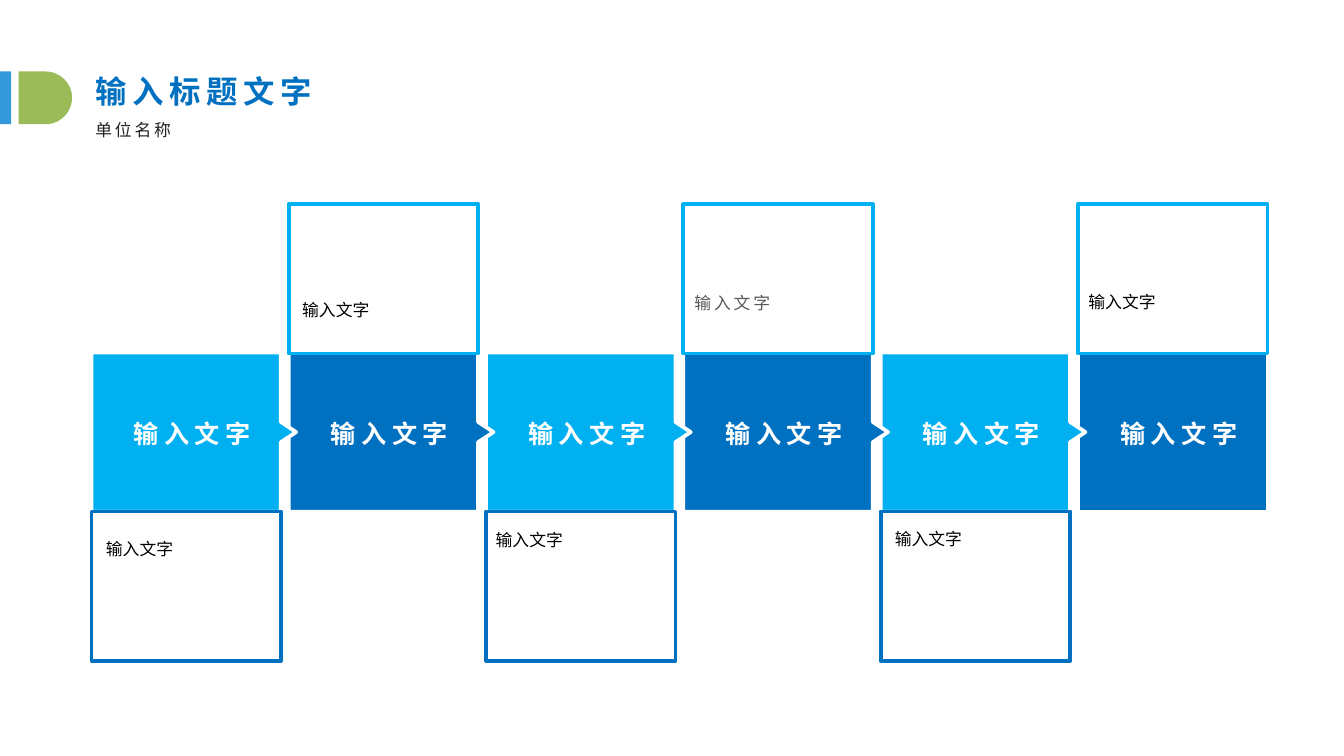
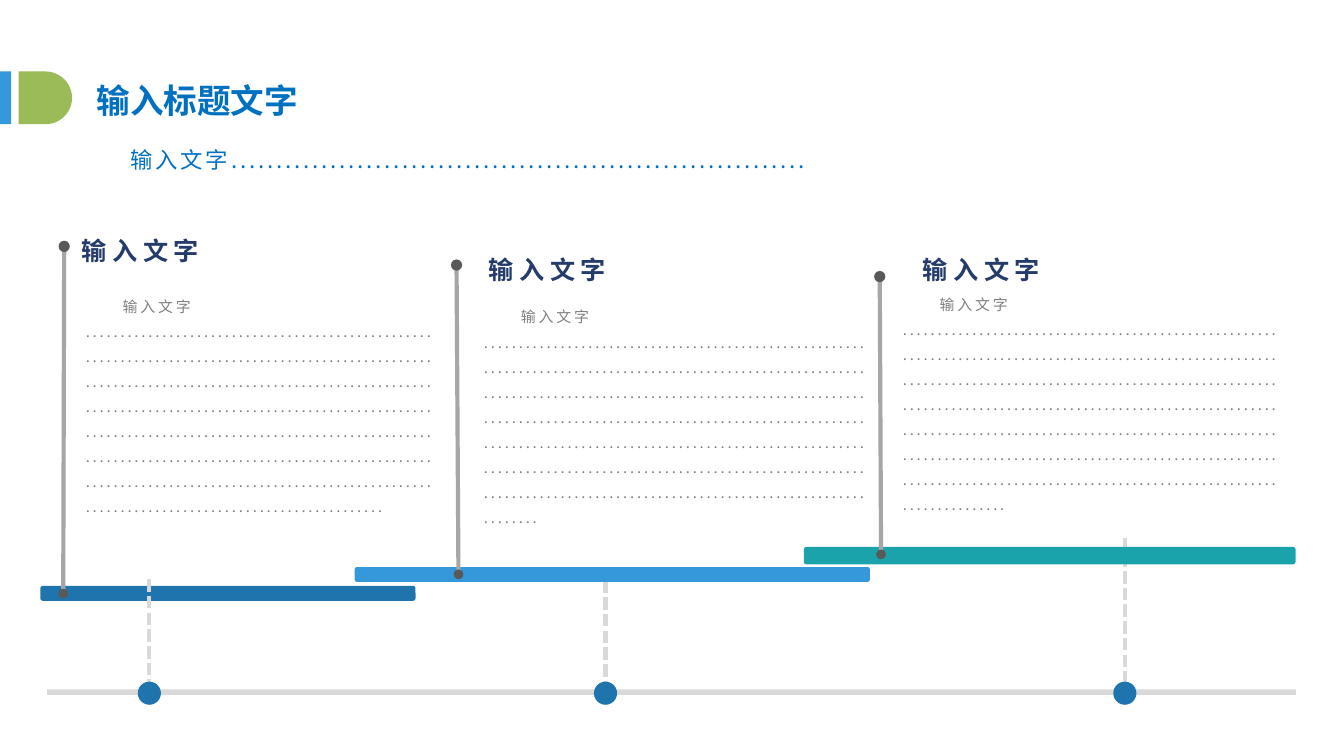
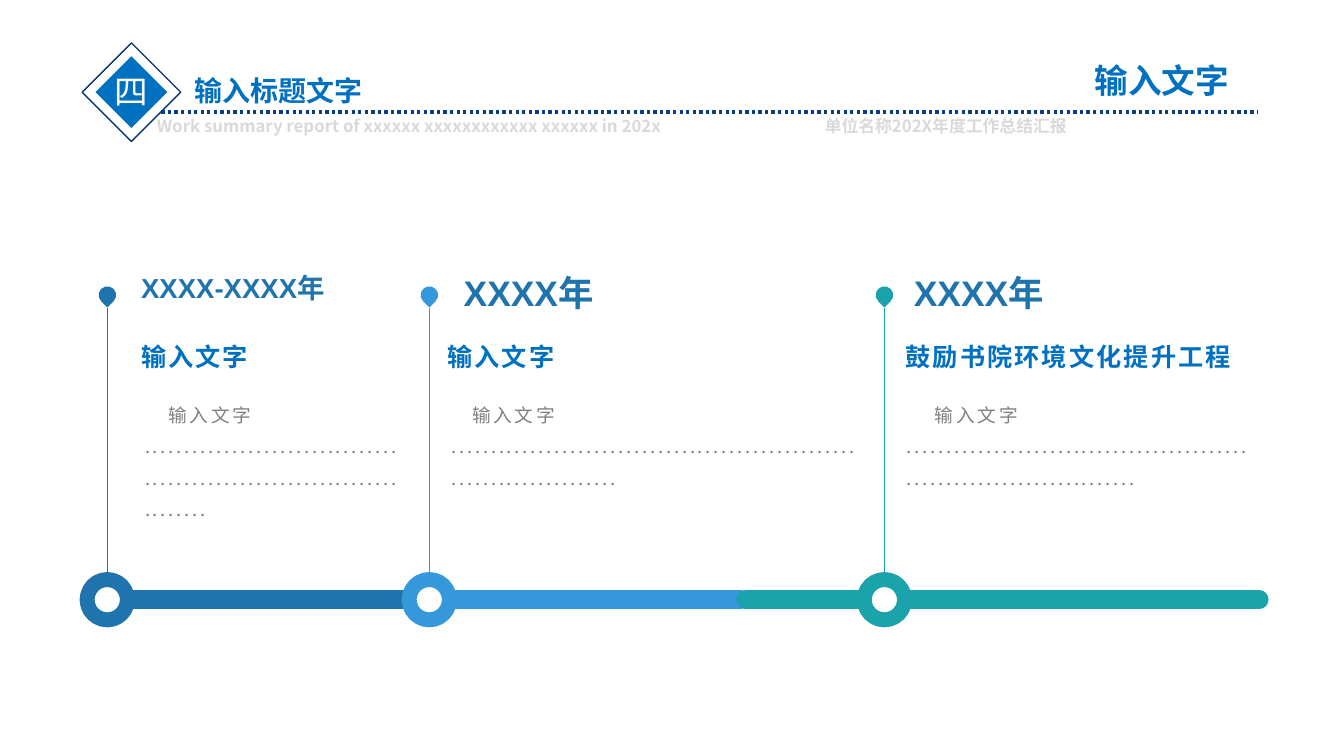
from lxml import etree
from pptx import Presentation
from pptx.dml.color import RGBColor
from pptx.enum.dml import MSO_LINE
from pptx.enum.shapes import MSO_CONNECTOR, MSO_SHAPE
from pptx.enum.text import MSO_ANCHOR, PP_ALIGN
from pptx.oxml.ns import qn
from pptx.util import Pt

RECTANGLE = MSO_SHAPE.RECTANGLE
ROUNDED = MSO_SHAPE.ROUNDED_RECTANGLE
OVAL = MSO_SHAPE.OVAL
DIAMOND = MSO_SHAPE.DIAMOND
TEARDROP = MSO_SHAPE.TEAR
DELAY = MSO_SHAPE.FLOWCHART_DELAY
STRAIGHT = MSO_CONNECTOR.STRAIGHT
DASH = MSO_LINE.SQUARE_DOT
DOT = MSO_LINE.ROUND_DOT
TOP = MSO_ANCHOR.TOP
MIDDLE = MSO_ANCHOR.MIDDLE
BOTTOM = MSO_ANCHOR.BOTTOM
LEFT = PP_ALIGN.LEFT
CENTER = PP_ALIGN.CENTER

WHITE = RGBColor(0xFF, 0xFF, 0xFF)
BLACK = RGBColor(0x00, 0x00, 0x00)
INK = RGBColor(0x22, 0x22, 0x22)
DARK_GRAY = RGBColor(0x59, 0x59, 0x59)
GRAY = RGBColor(0x80, 0x80, 0x80)
POLE_GRAY = RGBColor(0xA6, 0xA6, 0xA6)
LIGHT_GRAY = RGBColor(0xD9, 0xD9, 0xD9)
BLUE = RGBColor(0x00, 0x70, 0xC0)
SKY = RGBColor(0x00, 0xB0, 0xF0)
STEEL = RGBColor(0x1F, 0x74, 0xAD)
AZURE = RGBColor(0x34, 0x98, 0xDB)
TEAL = RGBColor(0x1A, 0xA3, 0xAA)
GREEN = RGBColor(0x9B, 0xBB, 0x59)
NAVY = RGBColor(0x25, 0x3B, 0x6B)
FRAME_NAVY = RGBColor(0x06, 0x36, 0x72)
RULE_NAVY = RGBColor(0x07, 0x3E, 0x87)

FONT = "Noto Sans CJK SC"
YEAR_FONT = "Arial"
NORMAL = (7.2, 3.6, 7.2, 3.6)
HEAD = (7.2, 3.6, 7.2, 0)
SUBHEAD = (7.2, 0, 7.2, 3.6)
TIGHT = (5, 2.7, 5, 2.7)
PLACEHOLDER = "输入文字"
TITLE = "输入标题文字"


def add_text(slide, box, lines, size, color, bold=False, tracking=0, leading=None, anchor=TOP,
             align=LEFT, insets=NORMAL, indent=0, tab=None, font=FONT):
    frame = slide.shapes.add_textbox(*map(Pt, box)).text_frame
    frame.word_wrap = True
    frame.vertical_anchor = anchor
    frame.margin_left, frame.margin_top, frame.margin_right, frame.margin_bottom = map(Pt, insets)
    for index, line in enumerate(lines):
        paragraph = frame.paragraphs[0] if index == 0 else frame.add_paragraph()
        properties = paragraph._p.get_or_add_pPr()
        if tab:
            stops = etree.SubElement(properties, qn("a:tabLst"))
            etree.SubElement(stops, qn("a:tab"), pos=str(Pt(tab)), algn="l")
        if indent and index == 0:
            properties.set("marL", "0")
            properties.set("indent", str(Pt(indent)))
        paragraph.alignment = align
        paragraph.line_spacing = leading
        run = paragraph.add_run()
        run.text = line
        run.font.size = Pt(size)
        run.font.bold = bold
        run.font.color.rgb = color
        run.font.name = font
        character = run._r.get_or_add_rPr()
        character.set("spc", str(round(tracking * 100)))
        etree.SubElement(character, qn("a:ea"), typeface=FONT)


def style(shape, line=None, weight=1, fill=None, dash=None):
    if line is None:
        shape.line.fill.background()
    else:
        shape.line.color.rgb = line
        shape.line.width = Pt(weight)
        if dash:
            shape.line.dash_style = dash
    etree.SubElement(shape._element.spPr, qn("a:effectLst"))
    if fill is not None:
        shape.fill.solid()
        shape.fill.fore_color.rgb = fill
    return shape


presentation = Presentation()
presentation.slide_width = Pt(720)
presentation.slide_height = Pt(405)
blank = presentation.slide_layouts[6]
process, stages, timeline = [presentation.slides.add_slide(blank) for _ in range(3)]

for slide in (process, stages):
    for kind, left, width, color in ((RECTANGLE, 0, 6, AZURE), (DELAY, 10, 28.6, GREEN)):
        mark = slide.shapes.add_shape(kind, Pt(left), Pt(38.3), Pt(width), Pt(28.3))
        style(mark, fill=color)

add_text(process, (44, 31, 137, 31), [TITLE], 16.8, BLUE, True, 3, 1.2, insets=HEAD)
add_text(process, (44, 62, 114, 18), ["单位名称"], 9, INK, tracking=1.5, leading=1.2, insets=SUBHEAD)

TILE_LEFT, TILE_TOP, TILE_WIDTH, TILE_HEIGHT, TILE_STEP = 49, 188.8, 101.5, 85.4, 105.7
TILE_COUNT = 6
tile_lefts = [TILE_LEFT + TILE_STEP * index for index in range(TILE_COUNT)]
for index in reversed(range(TILE_COUNT)):
    left = tile_lefts[index]
    right, bottom = left + TILE_WIDTH, TILE_TOP + TILE_HEIGHT
    center = TILE_TOP + TILE_HEIGHT / 2
    color = BLUE if index % 2 else SKY
    if index == TILE_COUNT - 1:
        tile = process.shapes.add_shape(RECTANGLE, Pt(left), Pt(TILE_TOP), Pt(TILE_WIDTH), Pt(TILE_HEIGHT))
    else:
        outline = [(right, TILE_TOP), (right, center - 5.4), (right + 8.2, center),
                   (right, center + 5.4), (right, bottom), (left, bottom)]
        builder = process.shapes.build_freeform(Pt(left), Pt(TILE_TOP), scale=1.0)
        builder.add_line_segments([(Pt(x), Pt(y)) for x, y in outline], close=True)
        tile = builder.convert_to_shape()
    style(tile, WHITE, 2, color)

notes = [
    (49.7, 279.4, 1.5, BLACK, 0),
    (154.8, 92.9, 1.5, BLACK, 0),
    (258.5, 275, 1.5, BLACK, 0),
    (365, 89.3, 1.4, DARK_GRAY, 1.5),
    (472.3, 274.3, 1.5, BLACK, 0),
    (576, 88.6, 1.4, BLACK, 0),
]
for index, (left, (note_left, note_top, leading, color, tracking)) in enumerate(zip(tile_lefts, notes)):
    above = index % 2 == 1
    add_text(process, (left + 5, 216.7, 98, 27.4), [PLACEHOLDER], 13.5, WHITE, True, 3, 1.2, MIDDLE, CENTER)
    add_text(process, (note_left, note_top, 108, 82), [PLACEHOLDER], 9, color, False, tracking, leading,
             BOTTOM if above else TOP)
    frame_top = 109.4 if above else 274
    frame = process.shapes.add_shape(RECTANGLE, Pt(left), Pt(frame_top), Pt(TILE_WIDTH), Pt(80))
    style(frame, SKY if above else BLUE, 2).fill.background()

add_text(stages, (44.6, 39, 148, 29), [TITLE], 18, BLUE, True)
add_text(stages, (44.6, 75.6, 621, 47), [PLACEHOLDER + "." * 64], 12, BLUE, tracking=1.5, leading=1.2,
         insets=SUBHEAD, indent=18.2)

baseline = stages.shapes.add_shape(RECTANGLE, Pt(25.2), Pt(369.4), Pt(669), Pt(2.9))
style(baseline, fill=LIGHT_GRAY)
dashes = [(602.6, 288), (324.4, 311), (80, 310.3)]
bars = [(21.6, 313.9, 201, 8, STEEL), (430.6, 293, 263.5, 9.4, TEAL), (190, 303.8, 276, 8, AZURE)]
for (x, dash_top), (left, top, width, height, color) in zip(dashes, bars):
    dash = stages.shapes.add_connector(STRAIGHT, Pt(x), Pt(dash_top), Pt(x), Pt(366))
    style(dash, LIGHT_GRAY, 2.25, dash=DASH)
    bar = stages.shapes.add_shape(ROUNDED, Pt(left), Pt(top), Pt(width), Pt(height))
    style(bar, fill=color)
    marker = stages.shapes.add_shape(OVAL, Pt(x - 6.2), Pt(365.2), Pt(12.4), Pt(12.4))
    style(marker, fill=STEEL)

columns = [
    ((36.7, 118), (38.9, 152), 202, (34.4, 132), (33.9, 318)),
    ((254.9, 128.2), (252.2, 157.7), 221.8, (244.6, 142), (245.6, 307.7)),
    ((487.4, 128.2), (476.6, 151), 216.7, (471.3, 148.2), (472, 297)),
]
for heading, body, width, pole_top, pole_bottom in columns:
    add_text(stages, (*heading, 150, 24), [PLACEHOLDER], 13.5, NAVY, True, 3, 1.2, BOTTOM, insets=HEAD)
    add_text(stages, (*body, width, 128), [PLACEHOLDER, "." * 393], 8, GRAY, tracking=1.5, leading=1.4, indent=19.7)
    pole = stages.shapes.add_connector(STRAIGHT, *map(Pt, pole_bottom + pole_top))
    style(pole, POLE_GRAY, 2.25)
    for (x, y), size in ((pole_top, 6), (pole_bottom, 5.2)):
        knob = stages.shapes.add_shape(OVAL, Pt(x - size / 2), Pt(y - size / 2), Pt(size), Pt(size))
        style(knob, fill=DARK_GRAY)

events = [
    (57.5, 54, 224, STEEL, "XXXX-XXXX年", 14.7, 70.6, PLACEHOLDER, 70.6, 70.6, 151, 12.6),
    (230, 226.8, 396.7, AZURE, "XXXX年", 19, 243.4, PLACEHOLDER, 234.7, 234.7, 234.7, 11.2),
    (473.8, 399.6, 674.6, TEAL, "XXXX年", 19, 484.6, "鼓励书院环境文化提升工程", 480.2, 478.8, 198.7, 15),
]
for (x, start, end, color, year, year_size, year_left, heading, heading_left,
     body_left, body_width, indent) in events:
    segment = timeline.shapes.add_connector(STRAIGHT, Pt(start), Pt(321.3), Pt(end), Pt(321.3))
    style(segment, color, 10)
    segment._element.spPr.find(qn("a:ln")).set("cap", "rnd")
    ring = timeline.shapes.add_shape(OVAL, Pt(x - 10.8), Pt(310.5), Pt(21.6), Pt(21.6))
    style(ring, color, 8, WHITE)
    stem = timeline.shapes.add_connector(STRAIGHT, Pt(x), Pt(165), Pt(x), Pt(309.6))
    style(stem, color, 0.5)
    pin = timeline.shapes.add_shape(TEARDROP, Pt(x - 4.7), Pt(153.4), Pt(9.4), Pt(9.4))
    style(pin, fill=color).rotation = 135
    add_text(timeline, (year_left, 142.6, 120, 31), [year], year_size, STEEL, True, insets=TIGHT, font=YEAR_FONT)
    add_text(timeline, (heading_left, 178.8, 193, 23), [heading], 13.5, BLUE, True, 1.2, None, BOTTOM, insets=TIGHT)
    add_text(timeline, (body_left, 208, body_width, 75), [PLACEHOLDER, "." * 72], 10, GRAY,
             tracking=1.5, leading=1.4, indent=indent)

badge = timeline.shapes.add_shape(DIAMOND, Pt(51.2), Pt(30.2), Pt(38.4), Pt(38.4))
style(badge, fill=BLUE)
add_text(timeline, (54, 34.6, 34, 29), ["四"], 18, WHITE)
badge_frame = timeline.shapes.add_shape(DIAMOND, Pt(44), Pt(23), Pt(52.8), Pt(52.8))
style(badge_frame, FRAME_NAVY, 0.75).fill.background()
add_text(timeline, (97.2, 36, 110, 25), [TITLE], 15, BLUE, True)
header_rule = timeline.shapes.add_connector(STRAIGHT, Pt(86.4), Pt(60), Pt(674), Pt(60))
style(header_rule, RULE_NAVY, 1.75, dash=DOT)
add_text(timeline, (77, 58.3, 606, 18),
         ["Work summary report of xxxxxx xxxxxxxxxxxx xxxxxx in 202x\t单位名称202X年度工作总结汇报"],
         9, LIGHT_GRAY, True, tab=357.8)
add_text(timeline, (579.3, 28.8, 127, 29), [PLACEHOLDER], 18, BLUE, True)

presentation.save("out.pptx")
